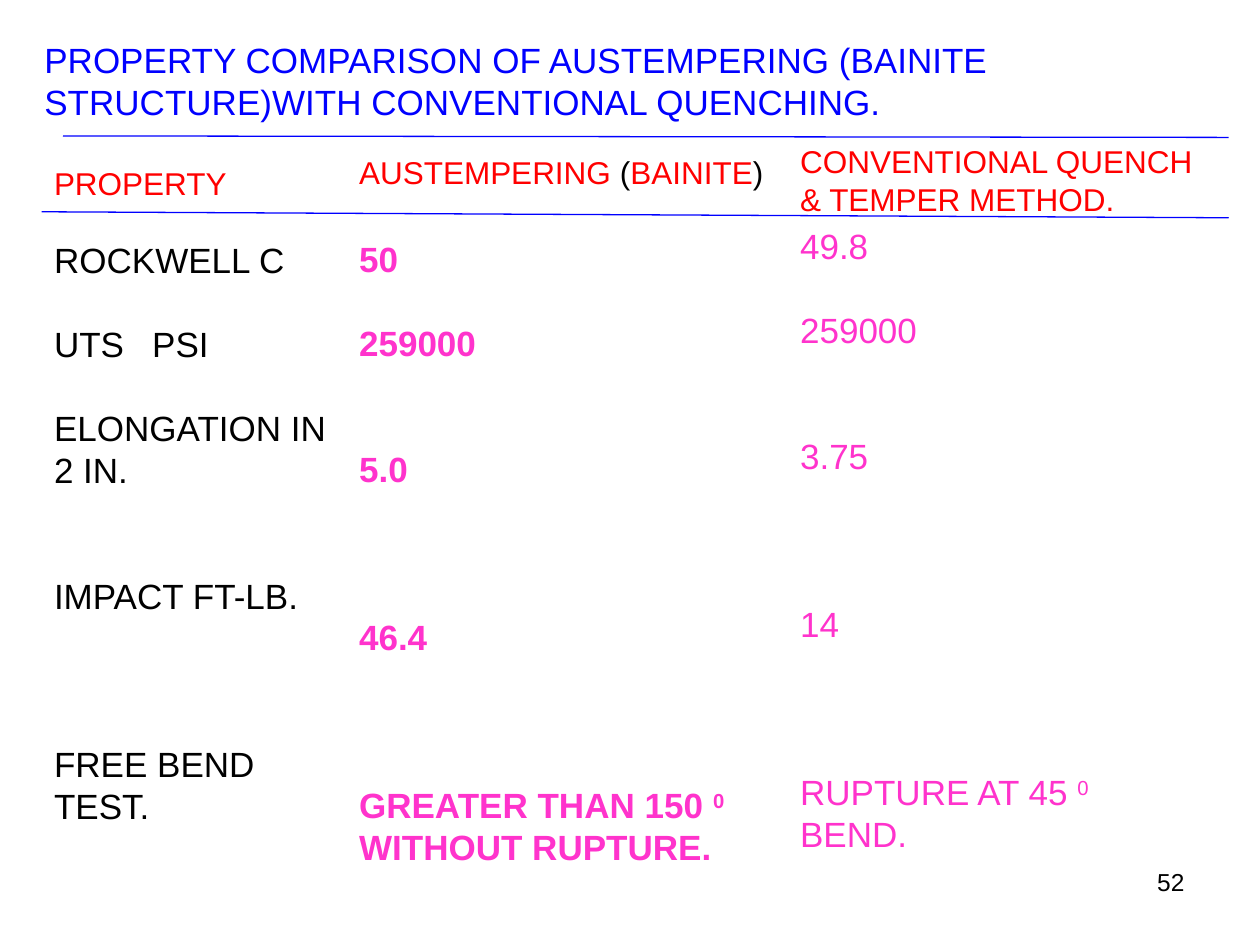
from dataclasses import dataclass

from lxml.etree import SubElement
from pptx import Presentation
from pptx.dml.color import RGBColor
from pptx.enum.shapes import MSO_CONNECTOR
from pptx.enum.text import MSO_ANCHOR, MSO_AUTO_SIZE, PP_ALIGN
from pptx.oxml.ns import qn
from pptx.util import Cm, Pt


@dataclass(frozen=True)
class Theme:
    font: str = "Arial"
    title: RGBColor = RGBColor(0x00, 0x00, 0xFF)
    header: RGBColor = RGBColor(0xFF, 0x00, 0x00)
    text: RGBColor = RGBColor(0x00, 0x00, 0x00)
    value: RGBColor = RGBColor(0xFF, 0x33, 0xCC)
    body_size: int = 20
    header_size: int = 18
    number_size: int = 14
    line_pitch: int = 24  # points taken by one body line


THEME = Theme()


@dataclass(frozen=True)
class Run:
    text: str
    color: RGBColor = THEME.text
    size: int = THEME.body_size
    bold: bool = False
    superscript: bool = False


@dataclass(frozen=True)
class Box:
    """Left, top, width and height in centimetres."""
    left: float
    top: float
    width: float
    height: float

    def lengths(self) -> tuple:
        return Cm(self.left), Cm(self.top), Cm(self.width), Cm(self.height)


@dataclass(frozen=True)
class Column:
    box: Box
    header: list[Run]
    header_gap: float  # points between the header and the first entry
    entries: list[list[Run]]
    gaps: tuple[int, ...]  # empty lines between entries


def header(text: str, color: RGBColor = THEME.header) -> Run:
    return Run(text, color, THEME.header_size)


def value(text: str, bold: bool = False, superscript: bool = False) -> Run:
    return Run(text, THEME.value, bold=bold, superscript=superscript)


def bold_value(text: str, superscript: bool = False) -> Run:
    return value(text, True, superscript)


VALUE_GAPS = (1, 2, 3, 3)
COLUMNS = [
    Column(Box(0.84, 3.18, 6.15, 15.29), [header("PROPERTY")], 21,
           [[Run("ROCKWELL C")], [Run("UTS\tPSI")], [Run("ELONGATION IN 2 IN.")],
            [Run("IMPACT FT-LB.")], [Run("FREE BEND TEST.")]], (1, 1, 2, 3)),
    Column(Box(6.99, 2.97, 8.69, 14.78),
           [header("AUSTEMPERING"), header(" (", THEME.text),
            header("BAINITE"), header(")", THEME.text)], 26.5,
           [[bold_value("50")], [bold_value("259000")], [bold_value("5.0")],
            [bold_value("46.4")],
            [bold_value("GREATER THAN 150 "), bold_value("0 ", True),
             bold_value("WITHOUT RUPTURE.")]], VALUE_GAPS),
    Column(Box(15.88, 2.74, 8.46, 14.76),
           [header("CONVENTIONAL QUENCH & TEMPER METHOD.")], 4,
           [[value("49.8")], [value("259000")], [value("3.75")], [value("14")],
            [value("RUPTURE AT 45 "), value("0 ", superscript=True),
             value("BEND.")]], VALUE_GAPS),
]
RULES = [((0.84, 4.27), (24.77, 4.39)), ((1.27, 2.74), (24.77, 2.77))]
TAB_STOP = Cm(1.98)


def add_runs(p, runs: list[Run]) -> None:
    for run in runs:
        r = p.add_run()
        r.text = run.text
        r.font.name = THEME.font
        r.font.size = Pt(run.size)
        r.font.bold = run.bold
        r.font.color.rgb = run.color
        if run.superscript:
            r.font._element.set("baseline", "30000")
        if "\t" in run.text:
            tabs = SubElement(p._p.get_or_add_pPr(), qn("a:tabLst"))
            SubElement(tabs, qn("a:tab"), pos=str(TAB_STOP), algn="l")


def prepare_frame(sp):
    tf = sp.text_frame
    tf.word_wrap = True
    tf.auto_size = MSO_AUTO_SIZE.NONE
    tf.vertical_anchor = MSO_ANCHOR.TOP
    return tf


def add_text_box(s, box: Box):
    return prepare_frame(s.shapes.add_textbox(*box.lengths()))


def set_title(s, text: str, box: Box) -> None:
    sp = s.shapes.title
    sp.left, sp.top, sp.width, sp.height = box.lengths()
    p = prepare_frame(sp).paragraphs[0]
    p.alignment = PP_ALIGN.LEFT
    add_runs(p, [Run(text, THEME.title)])


def add_column(s, column: Column) -> None:
    tf = add_text_box(s, column.box)
    add_runs(tf.paragraphs[0], column.header)
    spaces = [column.header_gap] + [n * THEME.line_pitch for n in column.gaps]
    for runs, space in zip(column.entries, spaces):
        p = tf.add_paragraph()
        p.space_before = Pt(space)
        add_runs(p, runs)


def add_rule(s, start: tuple[float, float], end: tuple[float, float]) -> None:
    ends = [Cm(v) for v in start + end]
    line = s.shapes.add_connector(MSO_CONNECTOR.STRAIGHT, *ends)
    line.line.color.rgb = THEME.title
    line.line.width = Pt(0.75)
    SubElement(line._element.spPr, qn("a:effectLst"))


def add_page_number(s, number: str, box: Box) -> None:
    p = add_text_box(s, box).paragraphs[0]
    p.alignment = PP_ALIGN.RIGHT
    add_runs(p, [Run(number, size=THEME.number_size)])


def main() -> None:
    prs = Presentation()
    prs.slide_width, prs.slide_height = Cm(25.4), Cm(19.05)
    s = prs.slides.add_slide(prs.slide_layouts.get_by_name("Title Only"))
    set_title(s, "PROPERTY COMPARISON OF AUSTEMPERING (BAINITE "
                 "STRUCTURE)WITH CONVENTIONAL QUENCHING.",
              Box(0.64, 0.64, 23.29, 1.96))
    for column in COLUMNS:
        add_column(s, column)
    for start, end in RULES:
        add_rule(s, start, end)
    add_page_number(s, "52", Box(18.21, 17.35, 5.92, 1.32))
    prs.save("out.pptx")


if __name__ == "__main__":
    main()
